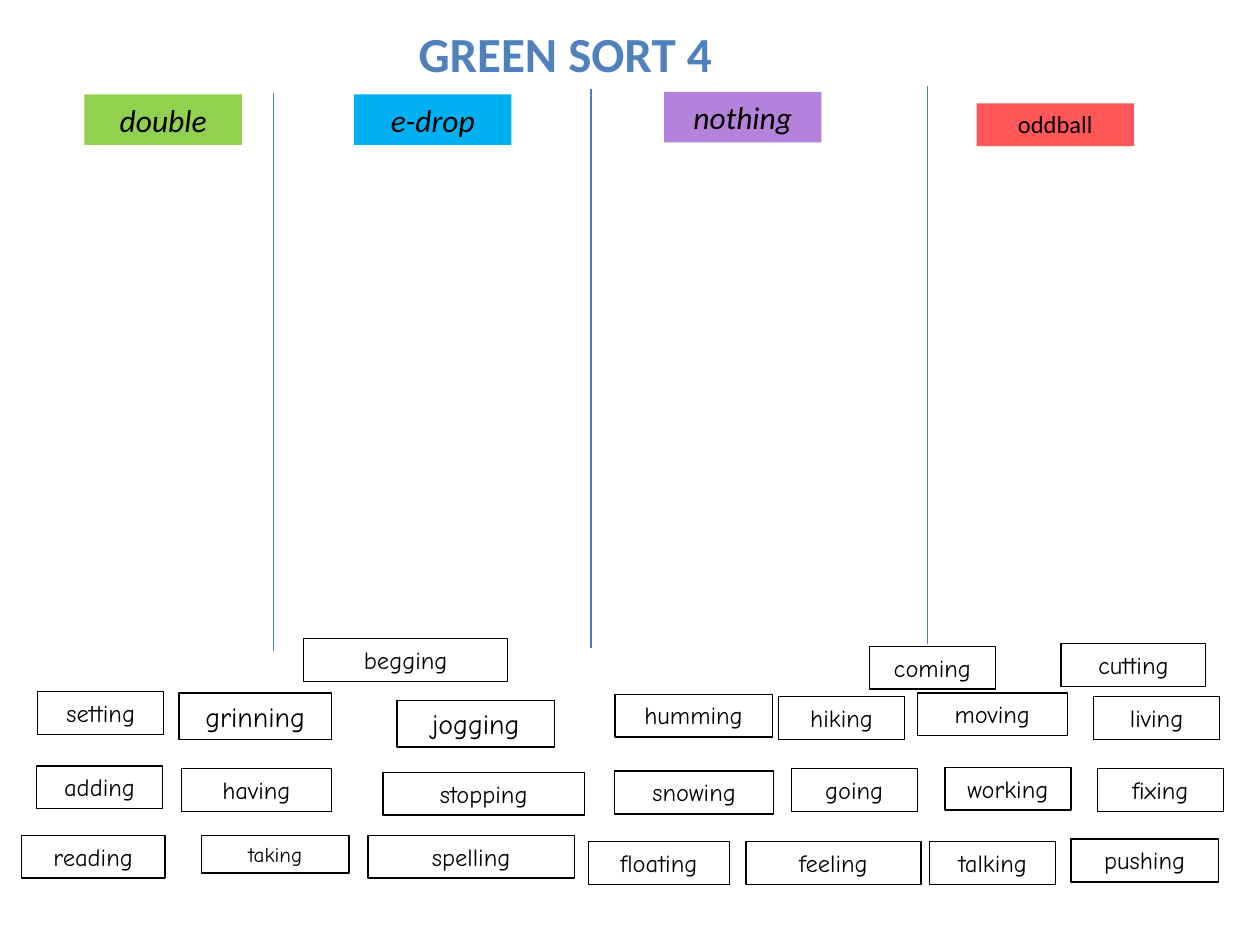
from pptx import Presentation, util as u
from pptx.dml.color import RGBColor
from pptx.enum import shapes, text
from pptx.oxml.ns import qn
from lxml import etree

BLACK, BLUE, LINE_BLUE = "000000", "4F81BD", "4B7EBC"
HEIGHTS = {12: 0.3, 14: 0.34, 16: 0.37, 18: 0.4}  # box height by text size


def rgb(value):
    return RGBColor.from_string(value)


class SortSlide:
    heading_font = "Calibri"
    word_font = "Comic Neue"
    line_width = u.Pt(0.75)

    def __init__(self, prs):
        self.s = prs.slides.add_slide(prs.slide_layouts[6])

    def label(self, sp, words, size, font, color=BLACK, bold=False, italic=False):
        tf = sp.text_frame
        tf.word_wrap = True
        tf.auto_size = text.MSO_AUTO_SIZE.SHAPE_TO_FIT_TEXT
        tf.vertical_anchor = text.MSO_ANCHOR.TOP
        p = tf.paragraphs[0]
        p.text = words
        p.alignment = text.PP_ALIGN.CENTER
        p.font.name, p.font.size = font, u.Pt(size)
        p.font.bold, p.font.italic = bold, italic
        p.font.color.rgb = rgb(color)

    def title(self, words, x, y, w, h):
        sp = self.s.shapes.add_textbox(*map(u.Inches, (x, y, w, h)))
        self.label(sp, words, 28, self.heading_font, BLUE, bold=True)

    def box(self, x, y, w, size):
        sp = self.s.shapes.add_shape(
            shapes.MSO_SHAPE.RECTANGLE,
            *map(u.Inches, (x, y, w, HEIGHTS[size])))
        sp.shadow.inherit = False
        return sp

    def heading(self, words, x, y, fill, size=18, italic=True):
        sp = self.box(x, y, 1.25, size)
        sp.fill.solid()
        sp.fill.fore_color.rgb = rgb(fill)
        sp.line.fill.background()
        self.label(sp, words, size, self.heading_font, italic=italic)

    def word(self, words, x, y, w=1, size=14):
        sp = self.box(x, y, w, size)
        sp.fill.background()
        sp.line.color.rgb = rgb(BLACK)
        sp.line.width = self.line_width
        self.label(sp, words, size, self.word_font)

    def divider(self, x, y, length=4.43):
        line = self.s.shapes.add_connector(
            shapes.MSO_CONNECTOR.STRAIGHT,
            *map(u.Inches, (x, y, x, y + length)))
        line.line.color.rgb = rgb(LINE_BLUE)
        line.line.width = self.line_width
        etree.SubElement(line._element.spPr, qn("a:effectLst"))


def main():
    prs = Presentation()
    prs.slide_width, prs.slide_height = u.Inches(10), u.Inches(7.5)
    slide = SortSlide(prs)

    # Title and column headings
    slide.title("GREEN SORT 4", 2.18, 0.14, 4.61, 0.57)
    slide.heading("double", 0.67, 0.75, "92D050")
    slide.heading("e-drop", 2.81, 0.75, "00B0F0")
    slide.heading("nothing", 5.27, 0.73, "B482DA")
    slide.heading("oddball", 7.75, 0.82, "FF5757", size=14, italic=False)

    # Column dividers
    for x, y in [(2.17, 0.74), (4.69, 0.71), (7.36, 0.68)]:
        slide.divider(x, y)

    # Loose word cards: word, left, top, then width and text size if special
    cards = [
        # Top row
        ("begging", 2.41, 5.07, 1.62),
        ("coming", 6.9, 5.13),
        ("cutting", 8.42, 5.11, 1.15),
        # Second row
        ("setting", 0.3, 5.49),
        ("grinning", 1.42, 5.5, 1.21, 16),
        ("jogging", 3.15, 5.56, 1.25, 16),
        ("humming", 4.88, 5.51, 1.25),
        ("hiking", 6.18, 5.53),
        ("moving", 7.28, 5.5, 1.19),
        ("living", 8.68, 5.53),
        # Third row
        ("adding", 0.29, 6.08),
        ("having", 1.44, 6.1, 1.19),
        ("stopping", 3.04, 6.13, 1.6),
        ("snowing", 4.88, 6.12, 1.26),
        ("going", 6.28, 6.1),
        ("working", 7.5, 6.09),
        ("fixing", 8.71, 6.1),
        # Bottom row
        ("reading", 0.17, 6.63, 1.14),
        ("taking", 1.6, 6.63, 1.17, 12),
        ("spelling", 2.92, 6.63, 1.64),
        ("floating", 4.67, 6.68, 1.12),
        ("feeling", 5.92, 6.68, 1.39),
        ("talking", 7.38, 6.68),
        ("pushing", 8.5, 6.66, 1.17),
    ]
    for card in cards:
        slide.word(*card)

    prs.save("out.pptx")


if __name__ == "__main__":
    main()
